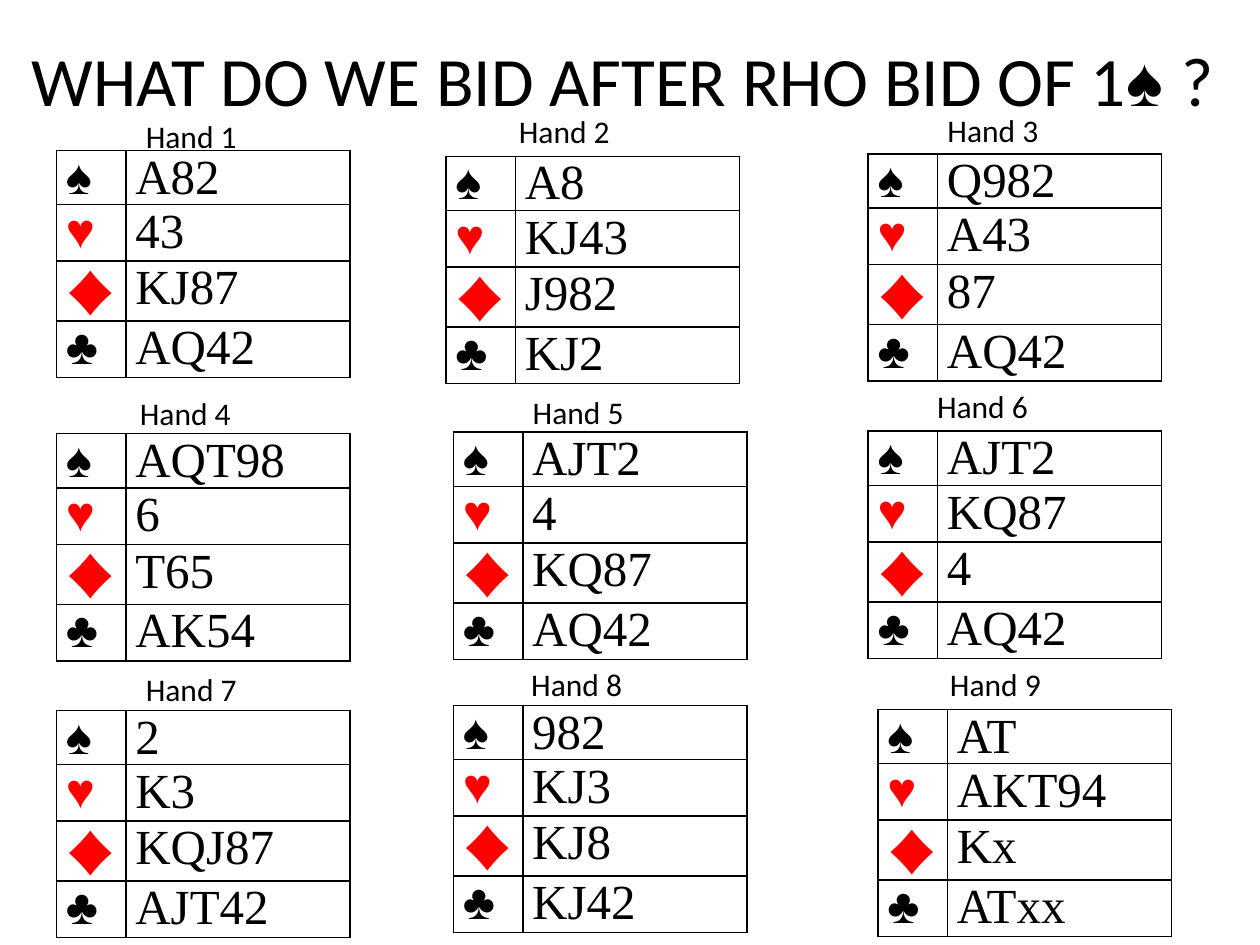
"""Build a slide of nine bridge hands to bid after a one spade opening."""
from dataclasses import dataclass

from lxml import etree
from pptx import Presentation
from pptx.dml.color import RGBColor
from pptx.enum.text import MSO_ANCHOR, MSO_AUTO_SIZE, PP_ALIGN
from pptx.oxml.ns import qn
from pptx.slide import Slide
from pptx.util import Cm, Pt

BLACK = RGBColor(0x00, 0x00, 0x00)
RED = RGBColor(0xFF, 0x00, 0x00)
MIDDLE = MSO_ANCHOR.MIDDLE
CENTER = PP_ALIGN.CENTER
NO_FIT = MSO_AUTO_SIZE.NONE
SANS, SERIF = "Calibri", "Times New Roman"
COLS = (1.4, 4.52)
ROWS = (1.09, 1.14, 1.14, 1.14)


@dataclass
class Suit:
    sign: str
    color: RGBColor
    font: str


@dataclass
class Hand:
    left: float
    top: float
    label_x: float
    label_y: float
    cards: str


SUITS = (
    Suit("♠", BLACK, SERIF),
    Suit("♥", RED, SERIF),
    Suit("♦", RED, SANS),
    Suit("♣", BLACK, SERIF),
)
HANDS = (
    Hand(1.14, 3.03, 2.69, 2.24, "A82 43 KJ87 AQ42"),
    Hand(8.99, 3.15, 10.21, 2.13, "A8 KJ43 J982 KJ2"),
    Hand(17.5, 3.1, 18.85, 2.11, "Q982 A43 87 AQ42"),
    Hand(1.14, 8.74, 2.57, 7.82, "AQT98 6 T65 AK54"),
    Hand(9.14, 8.71, 10.49, 7.8, "AJT2 4 KQ87 AQ42"),
    Hand(17.5, 8.69, 18.64, 7.67, "AJT2 KQ87 4 AQ42"),
    Hand(1.14, 14.32, 2.69, 13.39, "2 K3 KQJ87 AJT42"),
    Hand(9.14, 14.22, 10.46, 13.28, "982 KJ3 KJ8 KJ42"),
    Hand(17.7, 14.3, 18.9, 13.28, "AT AKT94 Kx ATxx"),
)


def style(run, size: float, font: str, color: RGBColor = BLACK) -> None:
    run.font.size = Pt(size)
    run.font.name = font
    run.font.color.rgb = color


def add_title(slide: Slide) -> None:
    title = slide.shapes.title
    title.left, title.top = Cm(0), Cm(0)
    title.width, title.height = Cm(25.1), Cm(3.18)
    frame = title.text_frame
    frame.auto_size = NO_FIT
    frame.vertical_anchor = MIDDLE
    para = frame.paragraphs[0]
    para.alignment = CENTER
    parts = (("WHAT DO WE BID AFTER RHO BID OF 1", SANS), ("♠ ", SERIF), ("?", SANS))
    for text, font in parts:
        run = para.add_run()
        run.text = text
        style(run, 39.6, font)


def add_edges(cell) -> None:
    props = cell._tc.get_or_add_tcPr()
    for tag in ("a:lnL", "a:lnR", "a:lnT", "a:lnB"):
        line = etree.SubElement(props, qn(tag), w=str(Pt(1)))
        fill = etree.SubElement(line, qn("a:solidFill"))
        etree.SubElement(fill, qn("a:srgbClr"), val=str(BLACK))


def fill_cell(cell, text: str, font: str, color: RGBColor) -> None:
    cell.margin_left = cell.margin_right = Cm(0.19)
    cell.margin_top = cell.margin_bottom = Cm(0)
    add_edges(cell)
    cell.fill.background()
    cell.text_frame.text = text
    style(cell.text_frame.paragraphs[0].runs[0], 28, font, color)


def add_hand(slide: Slide, hand: Hand) -> None:
    table = slide.shapes.add_table(
        len(ROWS), len(COLS), Cm(hand.left), Cm(hand.top), Cm(sum(COLS)), Cm(sum(ROWS))
    ).table
    table.first_row = table.horz_banding = False
    for col, width in zip(table.columns, COLS):
        col.width = Cm(width)
    for i, (suit, cards) in enumerate(zip(SUITS, hand.cards.split())):
        table.rows[i].height = Cm(ROWS[i])
        fill_cell(table.cell(i, 0), suit.sign, suit.font, suit.color)
        fill_cell(table.cell(i, 1), cards, SERIF, BLACK)


def add_label(slide: Slide, hand: Hand, number: int) -> None:
    box = slide.shapes.add_textbox(Cm(hand.label_x), Cm(hand.label_y), Cm(3.5), Cm(1.02))
    frame = box.text_frame
    frame.word_wrap = True
    frame.text = f"Hand {number}"
    style(frame.paragraphs[0].runs[0], 18, SANS)


def main() -> None:
    deck = Presentation()
    deck.slide_width, deck.slide_height = Cm(25.4), Cm(19.05)
    slide = deck.slides.add_slide(deck.slide_layouts[5])
    add_title(slide)
    for hand in HANDS:
        add_hand(slide, hand)
    for number, hand in enumerate(HANDS, 1):
        add_label(slide, hand, number)
    deck.save("out.pptx")


if __name__ == "__main__":
    main()
